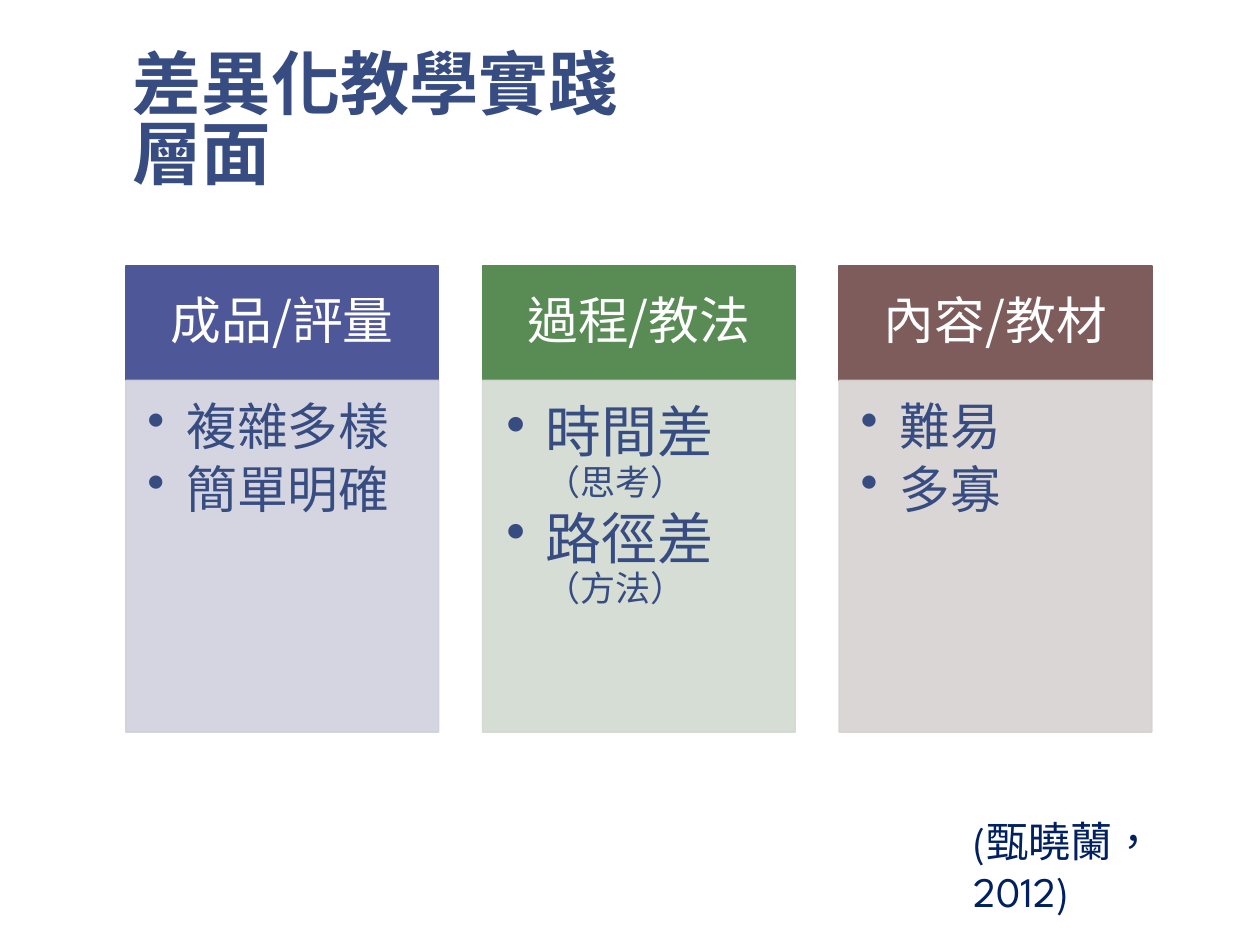
from lxml.etree import SubElement
from pptx import Presentation
from pptx.dml.color import RGBColor
from pptx.enum.lang import MSO_LANGUAGE_ID as Lang
from pptx.enum.shapes import MSO_SHAPE as Shape
from pptx.enum.text import MSO_ANCHOR as Anchor, MSO_AUTO_SIZE as AutoSize, PP_ALIGN as Align
from pptx.oxml.ns import qn
from pptx.util import Cm, Pt

COLORS = {"navy": "374C81", "citation": "002060", "white": "FFFFFF"}
LATIN, CJK = "League Spartan", "Noto Sans CJK SC"

TITLE = "差異化教學實踐層面"
CITATION = "(甄曉蘭，2012)"
# Each list item holds (text, size) runs; insets are left, top, right, bottom in cm.
COLUMNS = [
    {"heading": ("成品", "/評量"), "dark": "4E5798", "light": "D0D1DD",
     "items": [[("複雜多樣", 29)], [("簡單明確", 29)]],
     "insets": (0.43, 0.43, 0.58, 0.64)},
    {"heading": ("過程", "/教法"), "dark": "598B55", "light": "D1DAD1",
     "items": [[("時間差", 32), ("（思考）", 20)], [("路徑差", 32), ("（方法）", 20)]],
     "insets": (0.48, 0.48, 0.64, 0.71)},
    {"heading": ("內容", "/教材"), "dark": "7E5C5C", "light": "D7D2D2",
     "items": [[("難易", 29)], [("多寡", 29)]],
     "insets": (0.43, 0.43, 0.58, 0.64)},
]
LEFT, TOP, WIDTH, PITCH = 2.54, 5.36, 6.3, 7.19
HEADING_HEIGHT, PANEL_HEIGHT = 2.31, 7.09
HEADING_INSETS = (0.58, 0.33, 0.58, 0.33)


def set_insets(frame, insets):
    frame.margin_left, frame.margin_top, frame.margin_right, frame.margin_bottom = map(Cm, insets)


def add_run(paragraph, text, size, color, font=LATIN, bold=False):
    run = paragraph.add_run()
    run.text = text
    run.font.size = Pt(size)
    run.font.name = font
    run.font.bold = bold
    run.font.color.rgb = RGBColor.from_string(color)
    run.font.language_id = Lang.TRADITIONAL_CHINESE


def set_spacing(paragraph, after_percent):
    """Tighten the lines and set the space after as a share of the text size."""
    paragraph.line_spacing = 0.9
    after = SubElement(paragraph._p.get_or_add_pPr(), qn("a:spcAft"))
    SubElement(after, qn("a:spcPct"), val=str(after_percent * 1000))


def add_bullet(paragraph):
    properties = paragraph._p.get_or_add_pPr()
    properties.set("marL", str(Cm(0.79)))
    properties.set("indent", str(-Cm(0.79)))
    SubElement(properties, qn("a:buChar"), char="•")


def add_block(slide, left, top, height, color, insets, opacity=100):
    block = slide.shapes.add_shape(Shape.RECTANGLE, Cm(left), Cm(top), Cm(WIDTH), Cm(height))
    block.shadow.inherit = False
    block.line.width = Pt(1)
    for fill in (block.fill, block.line.fill):
        fill.solid()
        fill.fore_color.rgb = RGBColor.from_string(color)
    if opacity < 100:
        for rgb in block._element.spPr.iter(qn("a:srgbClr")):
            SubElement(rgb, qn("a:alpha"), val=str(opacity * 1000))
    frame = block.text_frame
    frame.word_wrap = True
    set_insets(frame, insets)
    return frame


def add_column(slide, left, column):
    heading = add_block(slide, left, TOP, HEADING_HEIGHT, column["dark"], HEADING_INSETS)
    heading.vertical_anchor = Anchor.MIDDLE
    line = heading.paragraphs[0]
    line.alignment = Align.CENTER
    set_spacing(line, 35)
    for text, font in zip(column["heading"], (LATIN, CJK)):
        add_run(line, text, 29, COLORS["white"], font)

    panel = add_block(slide, left, TOP + HEADING_HEIGHT, PANEL_HEIGHT,
                      column["light"], column["insets"], opacity=90)
    panel.vertical_anchor = Anchor.TOP
    for number, item in enumerate(column["items"]):
        bullet = panel.add_paragraph() if number else panel.paragraphs[0]
        bullet.alignment = Align.LEFT
        set_spacing(bullet, 15)
        add_bullet(bullet)
        for text, size in item:
            add_run(bullet, text, size, COLORS["navy"])


def add_title(slide):
    title = slide.shapes.title
    title.left, title.top, title.width, title.height = Cm(2.34), Cm(1.7), Cm(10.69), Cm(2.39)
    frame = title.text_frame
    frame.word_wrap = True
    frame.auto_size = AutoSize.NONE
    frame.vertical_anchor = Anchor.BOTTOM
    set_insets(frame, (0.33, 0.18, 0.33, 0.18))
    line = frame.paragraphs[0]
    line.alignment = Align.LEFT
    line.line_spacing = 0.85
    add_run(line, TITLE, 39.6, COLORS["navy"], "Arial", bold=True)


def add_citation(slide):
    citation = slide.shapes.add_textbox(Cm(19.38), Cm(16.31), Cm(5.7), Cm(1.27))
    citation.text_frame.word_wrap = True
    add_run(citation.text_frame.paragraphs[0], CITATION, 24, COLORS["citation"])


def main():
    deck = Presentation()
    deck.slide_width, deck.slide_height = Cm(25.4), Cm(19.05)
    slide = deck.slides.add_slide(deck.slide_layouts[5])
    add_title(slide)
    for number, column in enumerate(COLUMNS):
        add_column(slide, LEFT + number * PITCH, column)
    add_citation(slide)
    deck.save("out.pptx")


if __name__ == "__main__":
    main()
